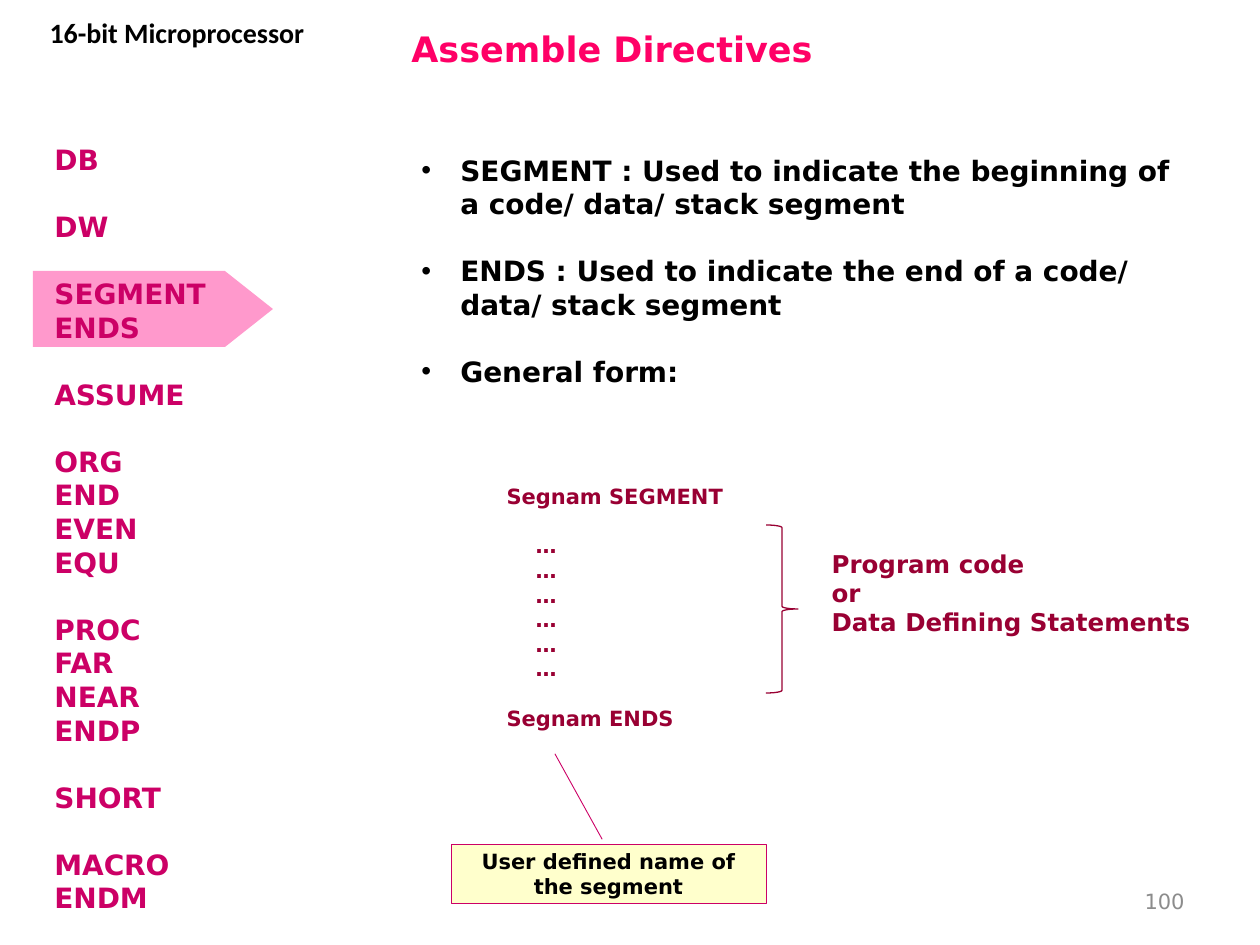
from lxml.etree import SubElement
from pptx import Presentation
from pptx.dml.color import RGBColor
from pptx.enum.shapes import MSO_SHAPE
from pptx.enum.text import MSO_ANCHOR, PP_ALIGN
from pptx.oxml.ns import qn
from pptx.util import Pt

PX = 914400 / 126
FONT = "DejaVu Sans"
BLACK = RGBColor(0, 0, 0)
WHITE = RGBColor(255, 255, 255)
GREY = RGBColor(0x8C, 0x8C, 0x8C)
PINK = RGBColor(0xFF, 0x00, 0x66)
LIGHT_PINK = RGBColor(0xFF, 0x99, 0xCC)
MAGENTA = RGBColor(0xCC, 0x00, 0x66)
MAROON = RGBColor(0x99, 0x00, 0x33)
CREAM = RGBColor(0xFF, 0xFF, 0xCC)

HEADER = [["16-bit Microprocessor"]]
TITLE = [["Assemble Directives"]]
PAGE_NUMBER = [["100"]]
DIRECTIVES = [
    ["DB"],
    ["DW"],
    ["SEGMENT", "ENDS"],
    ["ASSUME"],
    ["ORG", "END", "EVEN", "EQU"],
    ["PROC", "FAR", "NEAR", "ENDP"],
    ["SHORT"],
    ["MACRO", "ENDM"],
]
EXPLANATIONS = [
    ["SEGMENT : Used to indicate the beginning of a code/ data/ stack segment"],
    ["ENDS : Used to indicate the end of a code/ data/ stack segment"],
    ["General form:"],
]
GENERAL_FORM = [["Segnam SEGMENT"], ["…"] * 6, ["Segnam ENDS"]]
BODY_MEANING = [["Program code", "or", "Data Defining Statements"]]
NAME_NOTE = [["User defined name of the segment"]]


def px(*lengths):
    return [round(length * PX) for length in lengths]


def write(frame, groups, size, color, bold=True, font=FONT, align=PP_ALIGN.LEFT, gap=19.2):
    lines = [(text, gap if index and not position else 0)
             for index, group in enumerate(groups)
             for position, text in enumerate(group)]
    for index, (text, space) in enumerate(lines):
        paragraph = frame.add_paragraph() if index else frame.paragraphs[0]
        paragraph.text = text
        paragraph.alignment = align
        paragraph.space_before = Pt(space)
        paragraph.font.name = font
        paragraph.font.size = Pt(size)
        paragraph.font.bold = bold
        paragraph.font.color.rgb = color


def add_text(slide, box, groups, size, color, anchor=MSO_ANCHOR.TOP, **style):
    frame = slide.shapes.add_textbox(*px(*box)).text_frame
    frame.word_wrap = True
    frame.vertical_anchor = anchor
    write(frame, groups, size, color, **style)
    return frame


def add_preset(slide, preset, box, fill=None, line=None, width=0.5):
    shape = slide.shapes.add_shape(preset, *px(*box))
    shape.shadow.inherit = False
    if fill is None:
        shape.fill.background()
    else:
        shape.fill.solid()
        shape.fill.fore_color.rgb = fill
    if line is None:
        shape.line.fill.background()
    else:
        shape.line.color.rgb = line
        shape.line.width = Pt(width)
    return shape


def indent(paragraph, left, first=0):
    properties = paragraph._p.get_or_add_pPr()
    left, first = px(left, first)
    properties.set("marL", str(left))
    properties.set("indent", str(first))
    return properties


def add_form_table(slide):
    table = slide.shapes.add_table(1, 2, *px(494, 479, 714, 265)).table
    table.horz_banding = False
    for column, width in zip(table.columns, px(325, 389)):
        column.width = width
    form, meaning = table.cell(0, 0), table.cell(0, 1)
    for cell in (form, meaning):
        cell.fill.solid()
        cell.fill.fore_color.rgb = WHITE
    write(form.text_frame, GENERAL_FORM, 12, MAROON, gap=14)
    for paragraph in form.text_frame.paragraphs:
        if paragraph.text == "…":
            indent(paragraph, 29)
    meaning.margin_top, = px(72)
    write(meaning.text_frame, BODY_MEANING, 14, MAROON)


def main():
    presentation = Presentation()
    presentation.slide_width, presentation.slide_height = px(1260, 945)
    slide = presentation.slides.add_slide(presentation.slide_layouts[6])

    highlight = add_preset(slide, MSO_SHAPE.FLOWCHART_OFFPAGE_CONNECTOR,
                           (115, 189, 76, 240), LIGHT_PINK)
    highlight.rotation = 270

    add_text(slide, (399, 15, 829, 67), TITLE, 20, PINK, anchor=MSO_ANCHOR.MIDDLE)
    add_text(slide, (903, 876, 294, 50), PAGE_NUMBER, 12, GREY,
             anchor=MSO_ANCHOR.MIDDLE, bold=False, align=PP_ALIGN.RIGHT)
    add_text(slide, (9, 9, 336, 81), HEADER, 16, BLACK,
             font="Calibri", align=PP_ALIGN.CENTER)

    explanations = add_text(slide, (409, 147, 777, 251), EXPLANATIONS, 16, BLACK)
    for paragraph in explanations.paragraphs:
        properties = indent(paragraph, 39, -39)
        SubElement(properties, qn("a:buFont")).set("typeface", "Arial")
        SubElement(properties, qn("a:buChar")).set("char", "•")

    add_form_table(slide)

    callout = add_preset(slide, MSO_SHAPE.LINE_CALLOUT_1, (451, 844, 315, 59), CREAM, MAGENTA)
    for index, value in enumerate((-0.08, 0.48, -1.53, 0.33)):
        callout.adjustments[index] = value
    callout.text_frame.word_wrap = True
    callout.text_frame.vertical_anchor = MSO_ANCHOR.MIDDLE
    write(callout.text_frame, NAME_NOTE, 12, BLACK, align=PP_ALIGN.CENTER)

    add_preset(slide, MSO_SHAPE.RIGHT_BRACE, (766, 525, 32, 168), line=MAROON, width=0.75)
    add_text(slide, (42, 136, 205, 793), DIRECTIVES, 16, MAGENTA)
    presentation.save("out.pptx")


if __name__ == "__main__":
    main()
